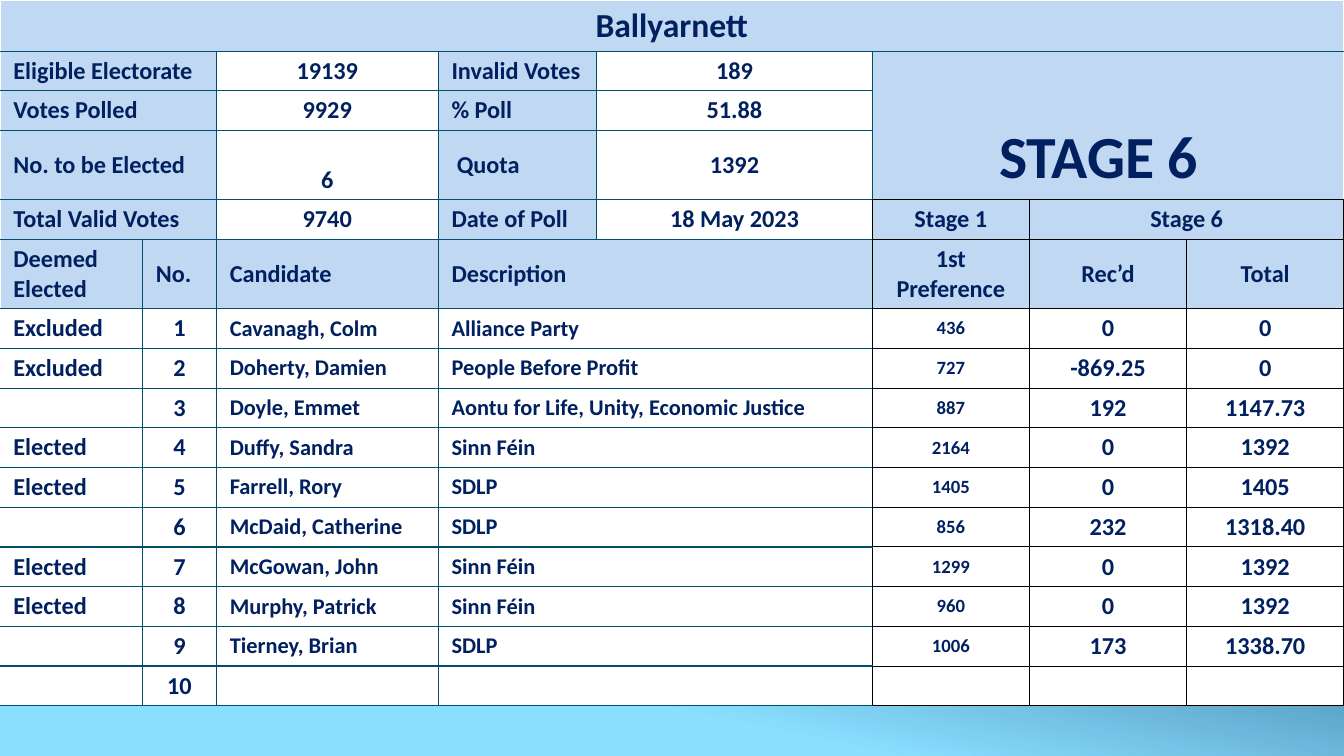
from lxml import etree
from pptx import Presentation
from pptx.dml.color import RGBColor
from pptx.enum.text import MSO_ANCHOR, PP_ALIGN
from pptx.oxml.ns import qn
from pptx.util import Inches, Pt

LEFT, CENTER = PP_ALIGN.LEFT, PP_ALIGN.CENTER
MIDDLE, BOTTOM = MSO_ANCHOR.MIDDLE, MSO_ANCHOR.BOTTOM
PALE, WHITE, NAVY = "C1D8F2", "FFFFFF", "002060"
TEAL_LINE, WHITE_LINE, BLACK_LINE = ("004E6C", 0.75), (WHITE, 1), ("000000", 0.5)


def color(value):
    return RGBColor.from_string(value)


def add_border(cell, side, line):
    value, width = line
    edge = etree.SubElement(cell._tc.get_or_add_tcPr(), qn(f"a:ln{side}"), w=str(Pt(width)))
    solid = etree.SubElement(edge, qn("a:solidFill"))
    etree.SubElement(solid, qn("a:srgbClr"), val=value)


column_widths = [1.06, 0.55, 1.65, 1.18, 2.05, 1.17, 1.17, 1.17]
row_heights = [0.37] + [0.28] * 4 + [0.48] + [0.28] * 10

summary = [
    ["Ballyarnett", "", "", "", "", "", "", ""],
    ["Eligible Electorate", "", "19139", "Invalid Votes", "189", "STAGE 6", "", ""],
    ["Votes Polled", "", "9929", "% Poll", "51.88", "", "", ""],
    ["No. to be Elected", "", "6", "Quota", "1392", "", "", ""],
    ["Total Valid Votes", "", "9740", "Date of Poll", "18 May 2023", "Stage 1", "Stage 6", ""],
    ["Deemed Elected", "No.", "Candidate", "Description", "", "1st Preference", "Rec’d", "Total"],
]
candidates = [
    ("Excluded", "Cavanagh, Colm", "Alliance Party", "436", "0", "0"),
    ("Excluded", "Doherty, Damien", "People Before Profit", "727", "-869.25", "0"),
    ("", "Doyle, Emmet", "Aontu for Life, Unity, Economic Justice", "887", "192", "1147.73"),
    ("Elected", "Duffy, Sandra", "Sinn Féin", "2164", "0", "1392"),
    ("Elected", "Farrell, Rory", "SDLP", "1405", "0", "1405"),
    ("", "McDaid, Catherine", "SDLP", "856", "232", "1318.40"),
    ("Elected", "McGowan, John", "Sinn Féin", "1299", "0", "1392"),
    ("Elected", "Murphy, Patrick", "Sinn Féin", "960", "0", "1392"),
    ("", "Tierney, Brian", "SDLP", "1006", "173", "1338.70"),
    ("", "", "", "", "", ""),
]
header_row = len(summary) - 1
entries = summary + [
    [status, str(number), name, party, "", first, received, total]
    for number, (status, name, party, first, received, total) in enumerate(candidates, 1)
]

prs = Presentation()
prs.slide_width = Inches(10)
prs.slide_height = prs.slide_width * 9 // 16
slide = prs.slides.add_slide(prs.slide_layouts[6])

backdrop = slide.background.fill
backdrop.gradient()
backdrop.gradient_angle = 258
for stop, (position, shade) in zip(backdrop.gradient_stops, [(0.42, "0D3868"), (0.82, "8ADFFF")]):
    stop.position = position
    stop.color.rgb = color(shade)

results = slide.shapes.add_table(
    len(row_heights), len(column_widths), 0, 0, prs.slide_width, Inches(5.18)
).table
results.first_row = results.horz_banding = False
for column, width in zip(results.columns, column_widths):
    column.width = Inches(width)
for row, height in zip(results.rows, row_heights):
    row.height = Inches(height)

results.cell(0, 0).merge(results.cell(0, 7))
results.cell(1, 5).merge(results.cell(3, 7))
results.cell(4, 6).merge(results.cell(4, 7))
for r in range(1, header_row):
    results.cell(r, 0).merge(results.cell(r, 1))
for r in range(header_row, len(entries)):
    results.cell(r, 3).merge(results.cell(r, 4))

for r, values in enumerate(entries):
    for c, value in enumerate(values):
        cell = results.cell(r, c)
        is_candidate = r > header_row
        is_title = r == 0
        is_stage = (r, c) == (1, 5)

        size = 18 if is_title else 32 if is_stage else 13
        if is_candidate:
            size = {2: 12, 3: 12, 5: 10}.get(c, 13)

        if is_title or c >= 5:
            align = CENTER
        elif is_candidate:
            align = CENTER if c == 1 else LEFT
        else:
            align = CENTER if r < header_row and c in (2, 4) else LEFT

        cell.margin_left = cell.margin_right = Inches(0.1)
        cell.margin_top = cell.margin_bottom = Pt(2.7)
        cell.vertical_anchor = BOTTOM if is_stage else MIDDLE
        cell.text_frame.text = value
        paragraph = cell.text_frame.paragraphs[0]
        paragraph.alignment = align
        for run in paragraph.runs:
            run.font.name = "Calibri"
            run.font.size = Pt(size)
            run.font.bold = True
            run.font.color.rgb = color(NAVY)
        if not value:
            etree.SubElement(paragraph._p, qn("a:endParaRPr"), sz=str(size * 100))

        if not cell.is_spanned:
            base = BLACK_LINE if c >= 5 and not is_stage else TEAL_LINE
            borders = dict.fromkeys("LRTB", base)
            if c == 0:
                borders["L"] = WHITE_LINE
            if is_title:
                borders["R"] = borders["T"] = WHITE_LINE
            if is_stage:
                borders["R"], borders["B"] = WHITE_LINE, BLACK_LINE
            if (r == 4 and c == 4) or (r >= header_row and c == 3):
                borders["R"] = BLACK_LINE
            for side, line in borders.items():
                add_border(cell, side, line)

        is_figure = 1 <= r < header_row and c in (2, 4)
        cell.fill.solid()
        cell.fill.fore_color.rgb = color(WHITE if is_candidate or is_figure else PALE)

results.cell(1, 5).margin_right = Inches(0.24)
results.cell(3, 2).margin_top = Pt(18.6)
results.cell(3, 3).margin_left = Inches(0.14)

prs.save("out.pptx")
